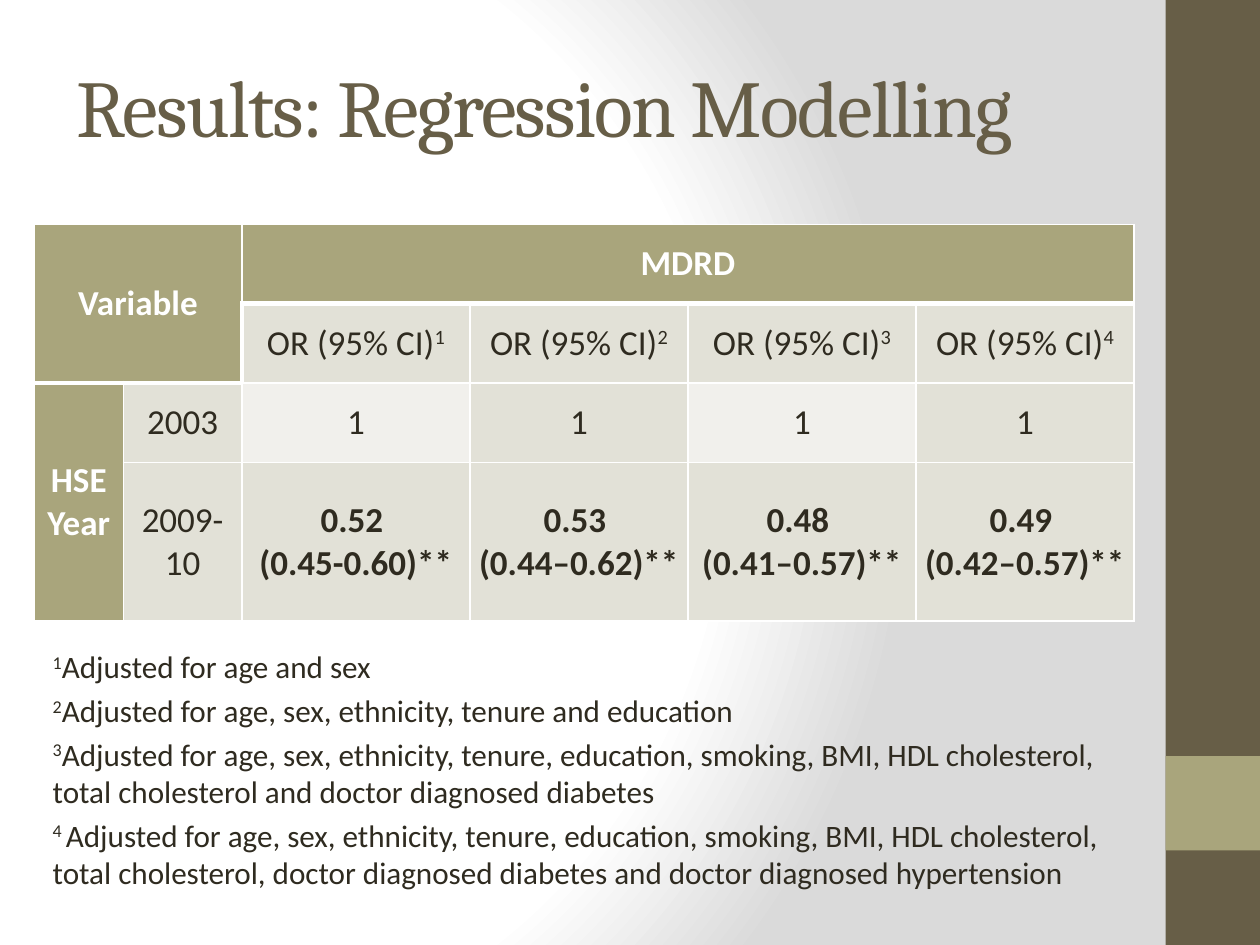
from lxml import etree
from pptx import Presentation
from pptx.dml.color import RGBColor
from pptx.enum.shapes import MSO_SHAPE
from pptx.enum.text import MSO_ANCHOR, PP_ALIGN
from pptx.oxml import parse_xml
from pptx.util import Inches, Pt

RECT = MSO_SHAPE.RECTANGLE
MIDDLE, TOP = MSO_ANCHOR.MIDDLE, MSO_ANCHOR.TOP
CENTER, LEFT = PP_ALIGN.CENTER, PP_ALIGN.LEFT
A = "http://schemas.openxmlformats.org/drawingml/2006/main"
P = "http://schemas.openxmlformats.org/presentationml/2006/main"

THEME = {
    "brown": "675E47", "olive": "A9A57C", "ink": "2F2B20", "white": "FFFFFF",
    "gray": "DADADA", "band": "E2E1D7", "pale": "F1F0EC",
    "head": "Cambria", "body": "Calibri",
    "title": 46, "cell": 20, "note": 17.8, "thin": 1, "thick": 3,
}

TITLE = "Results: Regression Modelling"
BARS = [("brown", (9.25, 0, 0.75, 7.5)), ("olive", (9.25, 6, 0.75, 0.75))]

# A caret starts a superscript; None is a cell hidden by a merge.
ROWS = [
    ["Variable", None, "MDRD", None, None, None],
    [None, None] + [f"OR (95% CI)^{n}" for n in range(1, 5)],
    ["HSE Year", "2003", "1", "1", "1", "1"],
    [None, "2009-10", "0.52 \n(0.45-0.60)**", "0.53 \n(0.44–0.62)**",
     "0.48 \n(0.41–0.57)**", "0.49 \n(0.42–0.57)**"],
]
MERGES = [((0, 0), (1, 1)), ((0, 2), (0, 5)), ((2, 0), (3, 0))]
WIDTHS = [0.71, 0.94, 1.81, 1.73, 1.81, 1.73]
HEIGHTS = [0.63, 0.63, 0.63, 1.26]

NOTES = [
    ("1", "Adjusted for age and sex"),
    ("2", "Adjusted for age, sex, ethnicity, tenure and education"),
    ("3", "Adjusted for age, sex, ethnicity, tenure, education, smoking, BMI, "
          "HDL cholesterol, total cholesterol and doctor diagnosed diabetes"),
    ("4 ", "Adjusted for age, sex, ethnicity, tenure, education, smoking, BMI, "
           "HDL cholesterol, total cholesterol, doctor diagnosed diabetes and "
           "doctor diagnosed hypertension"),
]


def color(name):
    return RGBColor.from_string(THEME[name])


def assign(item, values):
    for key, value in values.items():
        setattr(item, key, value)


def add_run(para, text, size, tint="ink", face="body", bold=False, **extra):
    """Add a run; extra holds raw run attributes such as baseline or spc."""
    run = para.add_run()
    run.text = text
    assign(run.font, {"size": Pt(THEME[size]), "name": THEME[face], "bold": bold})
    run.font.color.rgb = color(tint)
    for key, value in extra.items():
        run.font._element.set(key, str(value))


def paint_back(slide):
    """Fill the slide with a round gradient, white into gray."""
    stops = "".join(
        f'<a:gs pos="{pos * 1000}"><a:srgbClr val="{THEME[tint]}"/></a:gs>'
        for pos, tint in [(0, "white"), (75, "white"), (100, "gray")])
    back = parse_xml(
        f'<p:bg xmlns:p="{P}" xmlns:a="{A}"><p:bgPr><a:gradFill rotWithShape="1">'
        f'<a:gsLst>{stops}</a:gsLst><a:path path="circle"><a:fillToRect '
        'l="20000" t="50000" r="100000" b="50000"/></a:path></a:gradFill>'
        '<a:effectLst/></p:bgPr></p:bg>')
    slide.element.cSld.insert(0, back)


def add_bar(slide, tint, box):
    bar = slide.shapes.add_shape(RECT, *map(Inches, box))
    bar.shadow.inherit = False
    bar.fill.solid()
    bar.fill.fore_color.rgb = color(tint)
    bar.line.fill.background()


def add_box(slide, box, anchor):
    frame = slide.shapes.add_textbox(*map(Inches, box)).text_frame
    assign(frame, {"word_wrap": True, "vertical_anchor": anchor})
    return frame


def is_head(row, col):
    return row == 0 or col == 0 or (row, col) == (1, 1)


def is_thick(row, col, side):
    """Tell whether the edge lies between the headings and the data."""
    if side == "L":
        return (row, col) == (1, 2)
    edge = row if side == "T" else row + 1
    if (row, col, side) == (0, 0, "B"):
        return True
    return side in "TB" and edge == (2 if col < 2 else 1)


def add_edges(cell, row, col):
    props = cell._tc.get_or_add_tcPr()
    for spot, side in enumerate("LRTB"):
        width = THEME["thick" if is_thick(row, col, side) else "thin"]
        line = etree.Element(f"{{{A}}}ln{side}", w=str(Pt(width)))
        fill = etree.SubElement(line, f"{{{A}}}solidFill")
        etree.SubElement(fill, f"{{{A}}}srgbClr", val=THEME["white"])
        props.insert(spot, line)


def fill_cell(cell, row, col, text):
    head = is_head(row, col)
    pale = row == 2 and col in (2, 4)
    cell.fill.solid()
    cell.fill.fore_color.rgb = color("olive" if head else "pale" if pale else "band")
    add_edges(cell, row, col)
    assign(cell, {"vertical_anchor": MIDDLE, "margin_top": 0, "margin_bottom": 0,
                  "margin_left": Inches(0.06), "margin_right": Inches(0.06)})
    if text is None:
        return
    look = {"size": "cell", "tint": "white" if head else "ink",
            "bold": head or (row == 3 and col > 1)}
    frame = cell.text_frame
    for n, part in enumerate(text.split("\n")):
        para = frame.add_paragraph() if n else frame.paragraphs[0]
        para.alignment = CENTER
        main, _, sup = part.partition("^")
        add_run(para, main, **look)
        if sup:
            add_run(para, sup, **look, baseline=30000)


def add_grid(slide):
    box = (0.27, 1.78, sum(WIDTHS), sum(HEIGHTS))
    table = slide.shapes.add_table(len(ROWS), len(WIDTHS), *map(Inches, box)).table
    assign(table, {"first_row": False, "horz_banding": False})
    for col, width in zip(table.columns, WIDTHS):
        col.width = Inches(width)
    for row, height in zip(table.rows, HEIGHTS):
        row.height = Inches(height)
    for first, last in MERGES:
        table.cell(*first).merge(table.cell(*last))
    for r, row in enumerate(ROWS):
        for c, text in enumerate(row):
            fill_cell(table.cell(r, c), r, c, text)


def add_notes(slide):
    frame = add_box(slide, (0.2, 5.09, 8.82, 1.91), TOP)
    for n, (mark, text) in enumerate(NOTES):
        para = frame.add_paragraph() if n else frame.paragraphs[0]
        assign(para, {"alignment": LEFT, "space_before": Pt(0.2 * THEME["note"])})
        props = para._p.get_or_add_pPr()
        props.set("marL", str(Inches(0.12)))
        props.set("indent", "0")
        add_run(para, mark, "note", baseline=30000)
        add_run(para, text, "note")


def main():
    deck = Presentation()
    assign(deck, {"slide_width": Inches(10), "slide_height": Inches(7.5)})
    slide = deck.slides.add_slide(deck.slide_layouts[6])
    paint_back(slide)
    for tint, box in BARS:
        add_bar(slide, tint, box)
    title = add_box(slide, (0.51, 0.21, 8.59, 1.25), MIDDLE)
    add_run(title.paragraphs[0], TITLE, "title", "brown", "head", spc=-100)
    add_notes(slide)
    add_grid(slide)
    deck.save("out.pptx")


if __name__ == "__main__":
    main()
